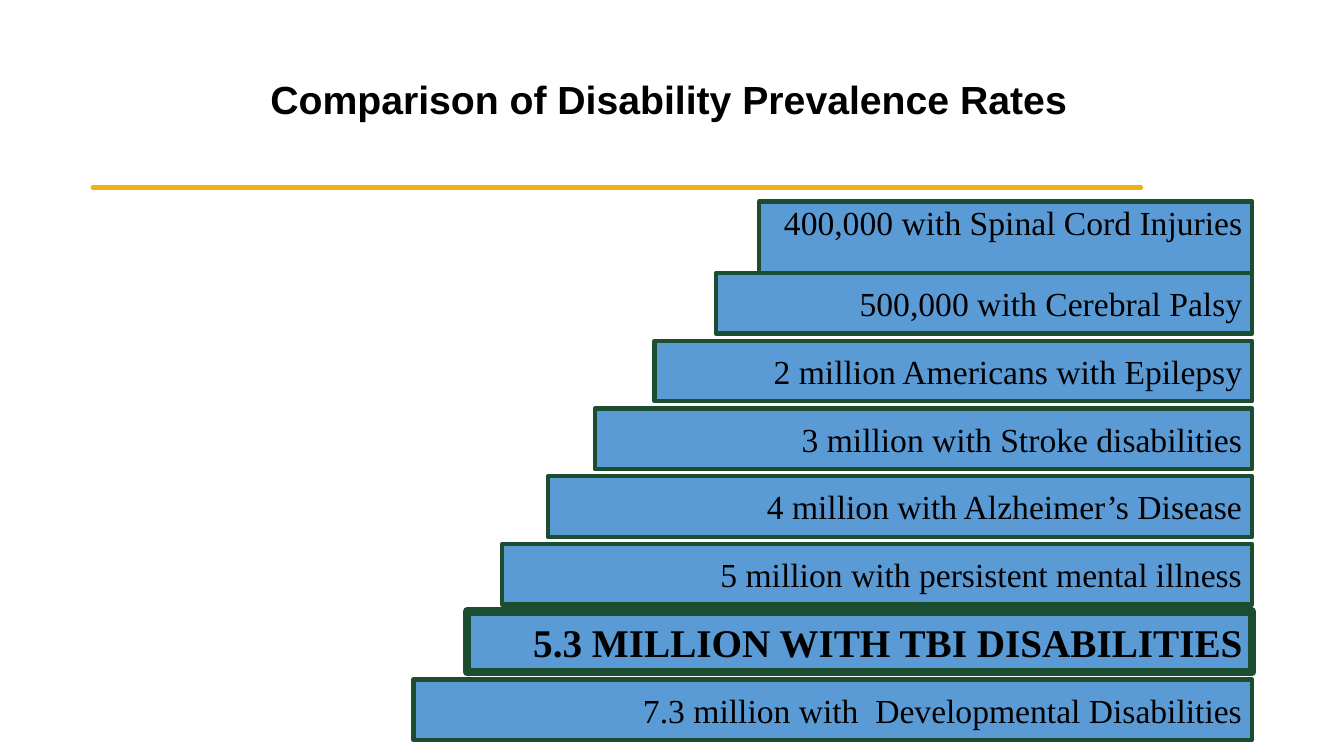
import pptx
import pptx.util
import pptx.dml.color
import pptx.enum.shapes
import pptx.enum.text
import pptx.oxml.ns
import lxml.etree

COLORS = {"gold": "EEB111", "blue": "5B9BD5", "green": "1D4D31", "black": "000000"}
WIDE, HIGH = pptx.util.Inches(13.33), pptx.util.Inches(7.5)
ANCHOR = pptx.enum.text.MSO_ANCHOR
STEPS = [
    (58.77, "400,000 with Spinal Cord Injuries"),
    (63.94, "500,000 with Cerebral Palsy"),
    (71.27, "2 million Americans with Epilepsy"),
    (78.37, "3 million with Stroke disabilities"),
    (84.01, "4 million with Alzheimer’s Disease"),
    (89.42, "5 million with persistent mental illness"),
    (93.63, "5.3 MILLION WITH TBI DISABILITIES"),
    (100, "7.3 million with  Developmental Disabilities"),
]
STRONG = 6


def paint(name):
    """Return the named colour."""
    return pptx.dml.color.RGBColor.from_string(COLORS[name])


def part(box, left, top, width, height):
    """Return a box given in percent of another box."""
    x, y, w, h = box
    return (int(x + w * left / 100), int(y + h * top / 100),
            int(w * width / 100), int(h * height / 100))


def write(shape, text, face, size, bold=False, anchor=ANCHOR.MIDDLE):
    """Put one styled paragraph in a shape and return it."""
    frame = shape.text_frame
    frame.text = text
    frame.word_wrap = True
    frame.vertical_anchor = anchor
    line = frame.paragraphs[0]
    font = line.runs[0].font
    font.name, font.size, font.bold = face, pptx.util.Pt(size), bold
    font.color.rgb = paint("black")
    return line


def head(slide, box):
    """Place the title over its gold rule."""
    spot = part(box, 16, 0, 83, 91.77)
    title = slide.shapes.add_textbox(*spot)
    line = write(title, "Comparison of Disability Prevalence Rates", "Arial", 28, True)
    line.line_spacing = 0.9
    x, y, w, h = box
    rule = slide.shapes.add_connector(
        pptx.enum.shapes.MSO_CONNECTOR.STRAIGHT, x, y + h, x + w, y + h)
    rule.line.color.rgb = paint("gold")
    rule.line.width = pptx.util.Pt(3)
    rule.get_or_add_ln().set("cap", "rnd")
    lxml.etree.SubElement(rule._element.spPr, pptx.oxml.ns.qn("a:effectLst"))


def stairs(slide, box):
    """Stack the bars, flush right, from rarest to most common."""
    tall, pitch = 11.24, 12.58
    for row, (width, text) in enumerate(STEPS):
        first, strong = row == 0, row == STRONG
        top = 0 if first else 100 - tall - pitch * (len(STEPS) - 1 - row)
        spot = part(box, 100 - width, top, width, 13.48 if first else tall)
        bar = slide.shapes.add_shape(pptx.enum.shapes.MSO_SHAPE.RECTANGLE, *spot)
        bar.shadow.inherit = False
        bar.fill.solid()
        bar.fill.fore_color.rgb = paint("blue")
        bar.line.color.rgb = paint("green")
        bar.line.width = pptx.util.Pt(6 if strong else 3)
        line = write(bar, text, "Times New Roman", 28 if strong else 24, strong,
                     ANCHOR.TOP if first else ANCHOR.MIDDLE)
        line.alignment = pptx.enum.text.PP_ALIGN.RIGHT
        if first:
            line.line_spacing = 0.9


def main():
    """Build and save the slide."""
    deck = pptx.Presentation()
    deck.slide_width, deck.slide_height = WIDE, HIGH
    slide = deck.slides.add_slide(deck.slide_layouts[6])
    page = (0, 0, WIDE, HIGH)
    head(slide, part(page, 6.9, 3.73, 78, 21.07))
    stairs(slide, part(page, 30.77, 26.67, 62.4, 71.2))
    deck.save("out.pptx")


if __name__ == "__main__":
    main()
